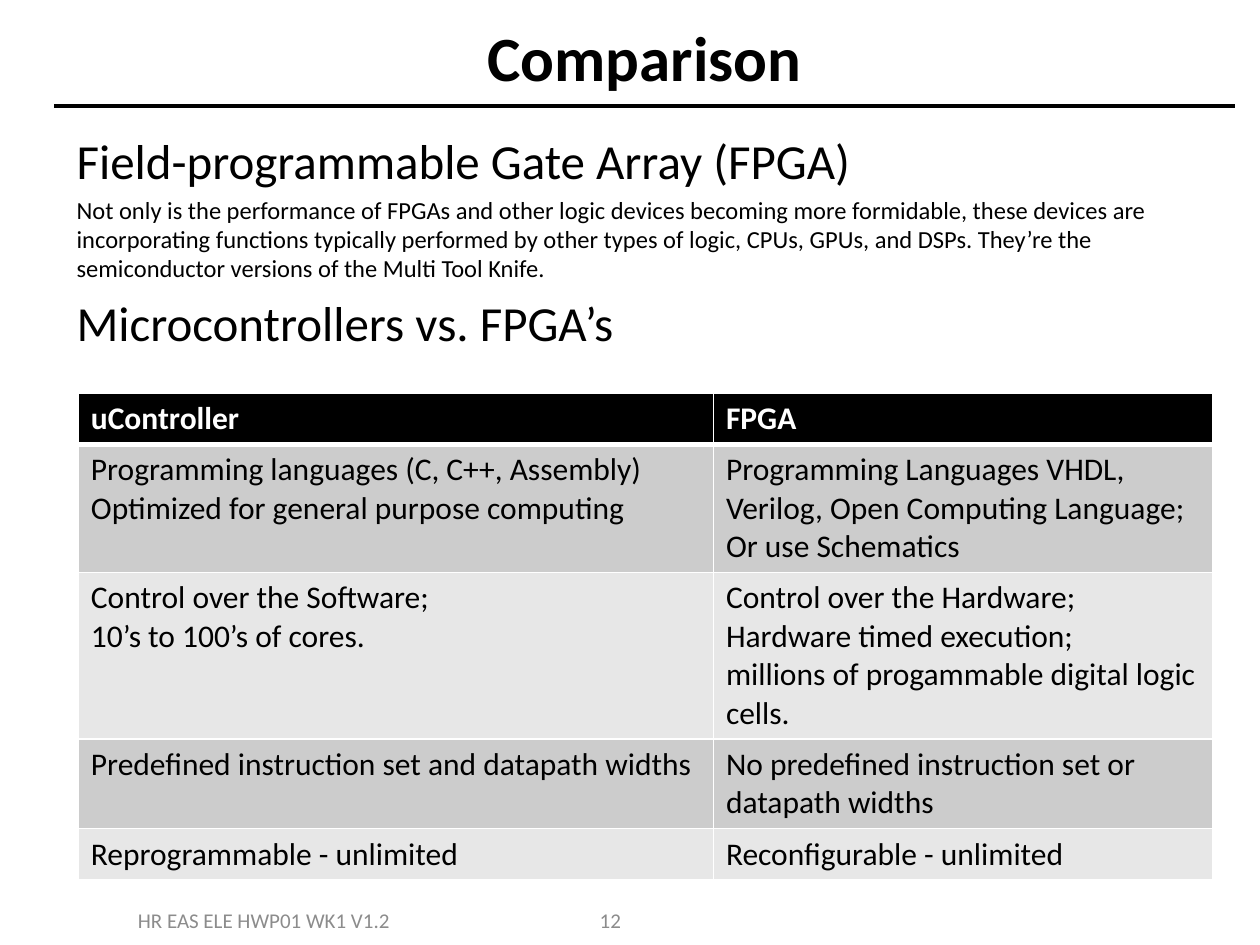
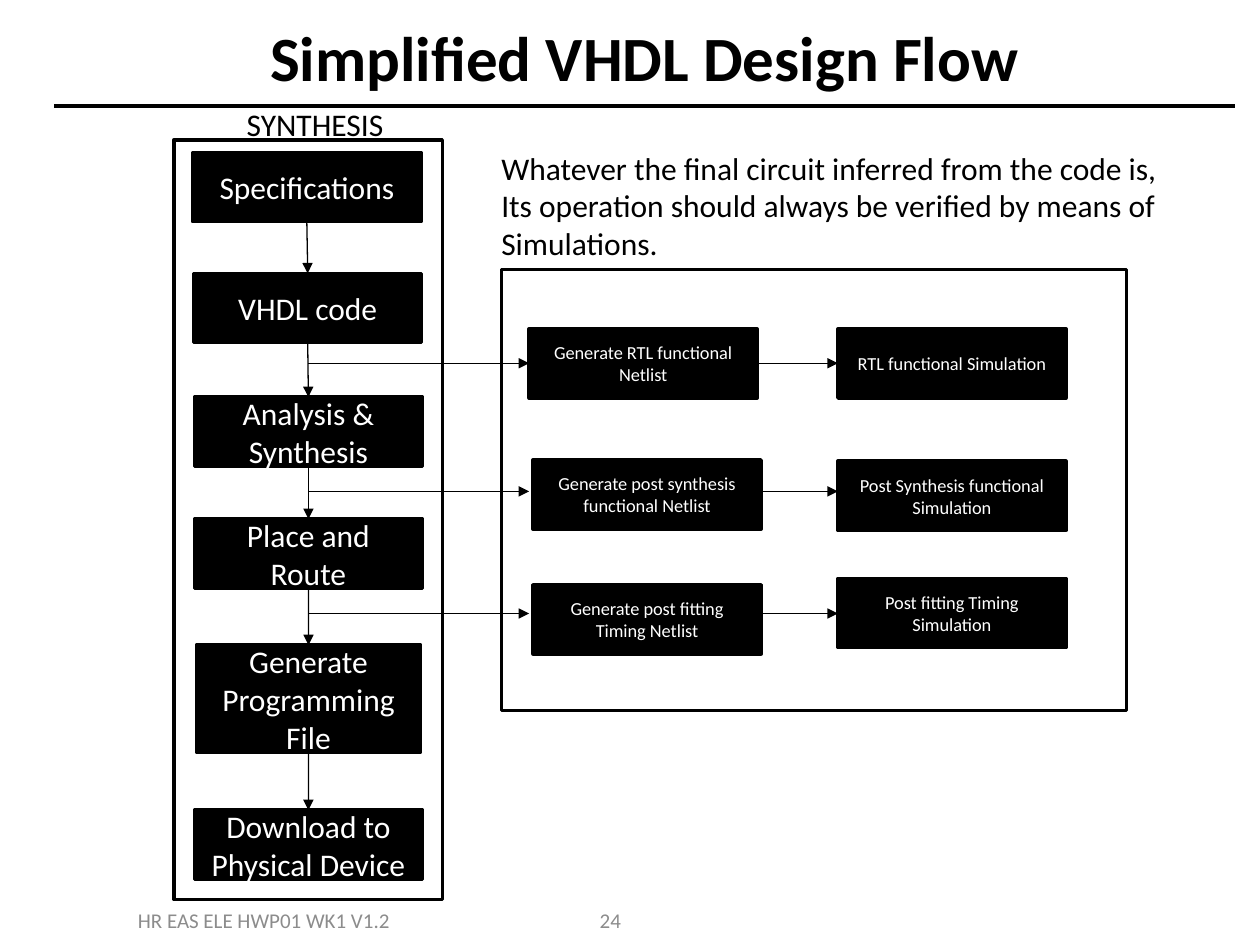
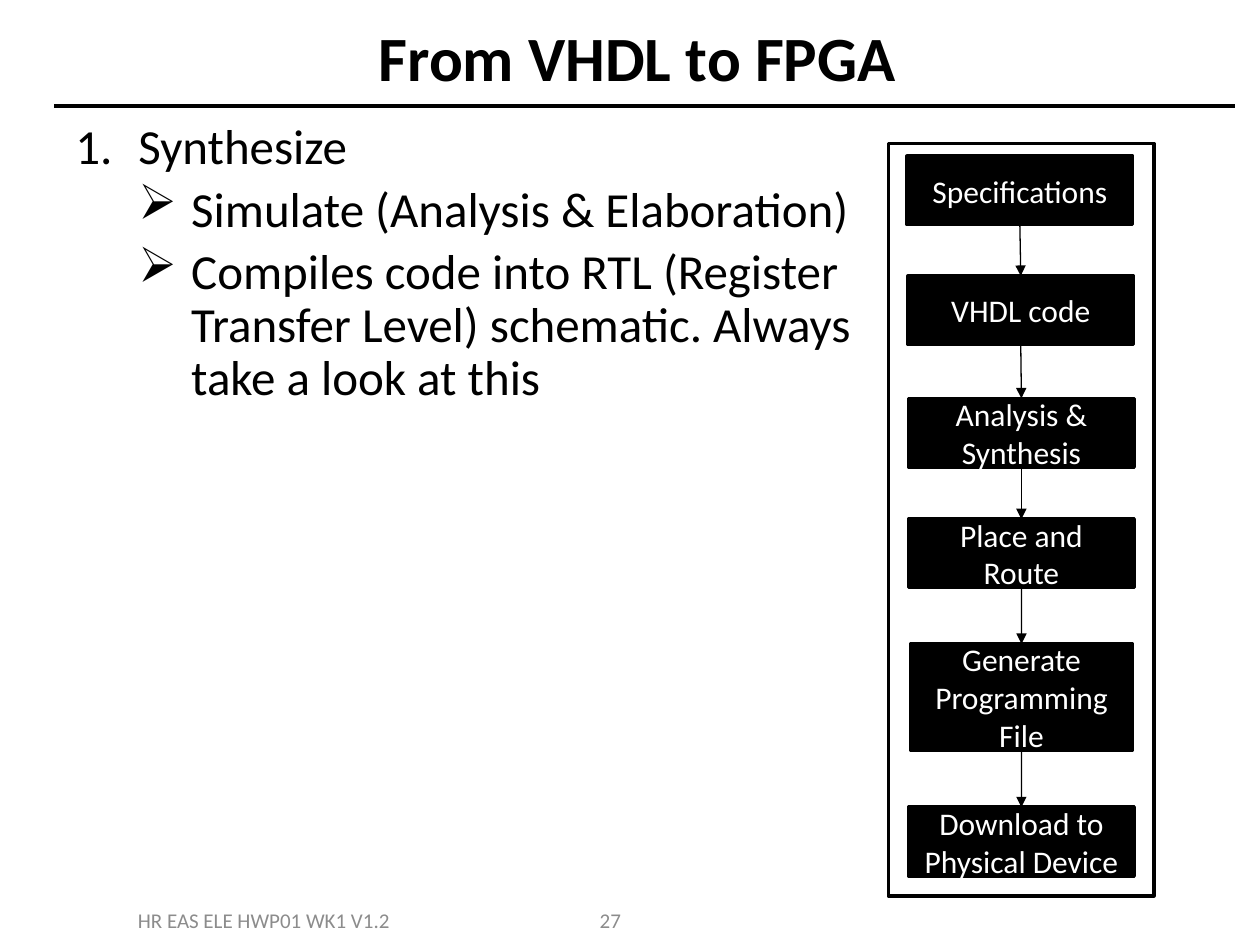
from itertools import pairwise

from lxml import etree
from pptx import Presentation
from pptx.dml.color import RGBColor
from pptx.enum.shapes import MSO_CONNECTOR as Connector, MSO_SHAPE as Preset
from pptx.enum.text import MSO_ANCHOR as Anchor, PP_ALIGN as Align
from pptx.oxml.ns import qn
from pptx.util import Pt

FONT = "Calibri"
BLACK, WHITE, GREY = "000000", "FFFFFF", "8C8C8C"
BANDS = ["CCCCCC", "E7E7E7"]
FOOTER = "HR EAS ELE HWP01 WK1 V1.2"
TOP, BOTTOM, LEFT, RIGHT = 0, 2, 1, 3

COMPARISON_TEXT = [
    ("Field-programmable Gate Array (FPGA)", 28),
    ("Not only is the performance of FPGAs and other logic devices becoming more formidable, "
     "these devices are incorporating functions typically performed by other types of logic, "
     "CPUs, GPUs, and DSPs. They’re the semiconductor versions of the Multi Tool Knife.", 14),
    ("Microcontrollers vs. FPGA’s", 28),
]
COMPARISON_COLUMNS = [362.9, 285.1]
COMPARISON_ROWS = [
    (1, ["uController"], ["FPGA"]),
    (3, ["Programming languages (C, C++, Assembly)", "Optimized for general purpose computing"],
     ["Programming Languages VHDL, Verilog, Open Computing Language;", "Or use Schematics"]),
    (4, ["Control over the Software;", "10’s to 100’s of cores."],
     ["Control over the Hardware; Hardware timed execution;",
      "millions of progammable digital logic cells."]),
    (2, ["Predefined instruction set and datapath widths"],
     ["No predefined instruction set or datapath widths"]),
    (1, ["Reprogrammable - unlimited"], ["Reconfigurable - unlimited"]),
]

FLOW_FRAME = (153.4, 434.2)
FLOW_STEPS = [
    ("Specifications", 10.8, 7.2, 130.3, 39.6),
    ("VHDL code", 11.3, 76.3, 130.3, 39.6),
    ("Analysis & Synthesis", 11.7, 147, 130.3, 39.6),
    ("Place and Route", 11.7, 216.7, 130.3, 39.6),
    ("Generate Programming File", 12.8, 288.7, 128.2, 61.2),
    ("Download to Physical Device", 11.7, 383, 130.3, 39.6),
]
SIMULATIONS = [
    (207.6, "Generate RTL functional Netlist", 302.4, 187.9, "RTL functional Simulation", 187.9),
    (280.8, "Generate post synthesis functional Netlist", 304.6, 262.8,
     "Post Synthesis functional Simulation", 263.5),
    (350.6, "Generate post fitting Timing Netlist", 304.6, 334.1,
     "Post fitting Timing Simulation", 330.5),
]
VERIFICATION_NOTE = [
    "Whatever the final circuit inferred from the code is,",
    "Its operation should always be verified by means of",
    "Simulations.",
]
SYNTHESIS_POINTS = [
    ("Synthesize", "buAutoNum", {"type": "arabicPeriod"}, 36, -36),
    ("Simulate (Analysis & Elaboration)", "buChar", {"char": "➢"}, 66.2, -30.2),
    ("Compiles code into RTL (Register Transfer Level) schematic. Always take a look at this",
     "buChar", {"char": "➢"}, 66.2, -30.2),
]


def color(value):
    return RGBColor.from_string(value)


def add_run(paragraph, text, size, ink=BLACK, bold=False):
    run = paragraph.add_run()
    run.text = text
    run.font.name, run.font.size, run.font.bold = FONT, Pt(size), bold
    run.font.color.rgb = color(ink)


def add_paragraphs(frame, count):
    return [frame.paragraphs[0]] + [frame.add_paragraph() for _ in range(count - 1)]


def add_text(slide, box, lines, size, ink=BLACK, bold=False, align=Align.LEFT,
             anchor=Anchor.TOP, wrap=True):
    frame = slide.shapes.add_textbox(*map(Pt, box)).text_frame
    frame.word_wrap, frame.vertical_anchor = wrap, anchor
    for paragraph, line in zip(add_paragraphs(frame, len(lines)), lines):
        paragraph.alignment = align
        add_run(paragraph, line, size, ink, bold)


def add_line(slide, start, end, width=0.75, arrow=True):
    line = slide.shapes.add_connector(Connector.STRAIGHT, *map(Pt, start + end))
    line.line.color.rgb, line.line.width = color(BLACK), Pt(width)
    if arrow:
        etree.SubElement(line.line._get_or_add_ln(), qn("a:tailEnd"), type="triangle")
    etree.SubElement(line._element.spPr, qn("a:effectLst"))
    return line


def connect(slide, source, source_side, target, target_side):
    arrow = add_line(slide, (0, 0), (0, 0))
    arrow.begin_connect(source, source_side)
    arrow.end_connect(target, target_side)


def add_frame(slide, box):
    shape = slide.shapes.add_shape(Preset.RECTANGLE, *map(Pt, box))
    shape.shadow.inherit = False
    shape.fill.background()
    shape.line.color.rgb, shape.line.width = color(BLACK), Pt(2)
    return shape


def add_box(slide, text, box, size):
    shape = add_frame(slide, box)
    shape.fill.solid()
    shape.fill.fore_color.rgb = color(BLACK)
    frame = shape.text_frame
    frame.word_wrap, frame.vertical_anchor = True, Anchor.MIDDLE
    frame.paragraphs[0].alignment = Align.CENTER
    add_run(frame.paragraphs[0], text, size, WHITE)
    return shape


def add_flow(slide, left, top, scale=1):
    boxes = [add_box(slide, text, (left + x * scale, top + y * scale, w * scale, h * scale), 18)
             for text, x, y, w, h in FLOW_STEPS]
    for upper, lower in pairwise(boxes):
        connect(slide, upper, BOTTOM, lower, TOP)
    add_frame(slide, (left, top, *(side * scale for side in FLOW_FRAME)))


def add_slide(presentation, title, number):
    slide = presentation.slides.add_slide(presentation.slide_layouts[6])
    add_line(slide, (31, 60.5), (705.6, 60.5), 2, arrow=False)
    centred = {"align": Align.CENTER, "anchor": Anchor.MIDDLE}
    add_text(slide, (25.2, 9.4, 686.2, 45.4), [title], 36, bold=True, **centred)
    add_text(slide, (36.7, 511.2, 228.2, 28.8), [FOOTER], 12, GREY, **centred)
    add_text(slide, (275, 511.2, 147.6, 28.8), [str(number)], 12, GREY, **centred)
    return slide


def set_borders(cell, row):
    properties = cell._tc.get_or_add_tcPr()
    thick = {0: "lnB", 1: "lnT"}.get(row)
    for side in ("lnL", "lnR", "lnT", "lnB"):
        width = Pt(3 if side == thick else 1)
        line = etree.SubElement(properties, qn(f"a:{side}"), w=str(width))
        fill = etree.SubElement(line, qn("a:solidFill"))
        etree.SubElement(fill, qn("a:srgbClr"), val=WHITE)


def add_comparison_table(slide):
    heights = [7.2 + 22 * lines for lines, *_ in COMPARISON_ROWS]
    table = slide.shapes.add_table(
        len(heights), len(COMPARISON_COLUMNS), Pt(44.8), Pt(224.8),
        Pt(sum(COMPARISON_COLUMNS)), Pt(sum(heights))).table
    table.horz_banding = False
    for column, width in zip(table.columns, COMPARISON_COLUMNS):
        column.width = Pt(width)
    for index, (_, *texts) in enumerate(COMPARISON_ROWS):
        header = index == 0
        table.rows[index].height = Pt(heights[index])
        for cell, lines in zip(table.rows[index].cells, texts):
            set_borders(cell, index)
            cell.fill.solid()
            cell.fill.fore_color.rgb = color(BLACK if header else BANDS[(index - 1) % 2])
            for paragraph, line in zip(add_paragraphs(cell.text_frame, len(lines)), lines):
                add_run(paragraph, line, 18, WHITE if header else BLACK, header)


def build_comparison(presentation):
    slide = add_slide(presentation, "Comparison", 12)
    frame = slide.shapes.add_textbox(Pt(36.7), Pt(71.3), Pt(648), Pt(408.2)).text_frame
    frame.word_wrap = True
    paragraphs = add_paragraphs(frame, len(COMPARISON_TEXT))
    for index, (paragraph, (text, size)) in enumerate(zip(paragraphs, COMPARISON_TEXT)):
        if index:
            paragraph.space_before = Pt(size * 0.2)
        add_run(paragraph, text, size)
    add_comparison_table(slide)


def build_design_flow(presentation):
    slide = add_slide(presentation, "Simplified VHDL Design Flow", 24)
    add_flow(slide, 99.4, 79.9)
    for y, netlist, netlist_left, netlist_top, simulation, simulation_top in SIMULATIONS:
        add_box(slide, netlist, (netlist_left, netlist_top, 130.3, 39.6), 10.5)
        add_box(slide, simulation, (478.8, simulation_top, 130.3, 39.6), 10.5)
        add_line(slide, (176.2, y), (302.4, y))
        add_line(slide, (432.7, y), (478.8, y))
    add_frame(slide, (286.6, 154, 357.1, 252))
    add_text(slide, (133.9, 56.2, 93.6, 28.8), ["SYNTHESIS"], 18, wrap=False)
    add_text(slide, (279.4, 81.4, 398.2, 72.7), VERIFICATION_NOTE, 18, wrap=False)


def build_vhdl_to_fpga(presentation):
    slide = add_slide(presentation, "From VHDL to FPGA ", 27)
    frame = slide.shapes.add_textbox(Pt(36), Pt(66.2), Pt(471.6), Pt(408.2)).text_frame
    frame.word_wrap = True
    paragraphs = add_paragraphs(frame, len(SYNTHESIS_POINTS))
    for index, (paragraph, point) in enumerate(zip(paragraphs, SYNTHESIS_POINTS)):
        text, bullet, settings, margin, indent = point
        properties = paragraph._p.get_or_add_pPr()
        properties.set("marL", str(Pt(margin)))
        properties.set("indent", str(Pt(indent)))
        etree.SubElement(properties, qn(f"a:{bullet}"), **settings)
        paragraph.level = min(index, 1)
        paragraph.line_spacing = 0.9
        if index:
            paragraph.space_before = Pt(5.6)
        add_run(paragraph, text, 28)
    add_flow(slide, 507.6, 82.1, 0.99)


def main():
    presentation = Presentation()
    presentation.slide_width, presentation.slide_height = Pt(720), Pt(540)
    build_comparison(presentation)
    build_design_flow(presentation)
    build_vhdl_to_fpga(presentation)
    presentation.save("out.pptx")


if __name__ == "__main__":
    main()
